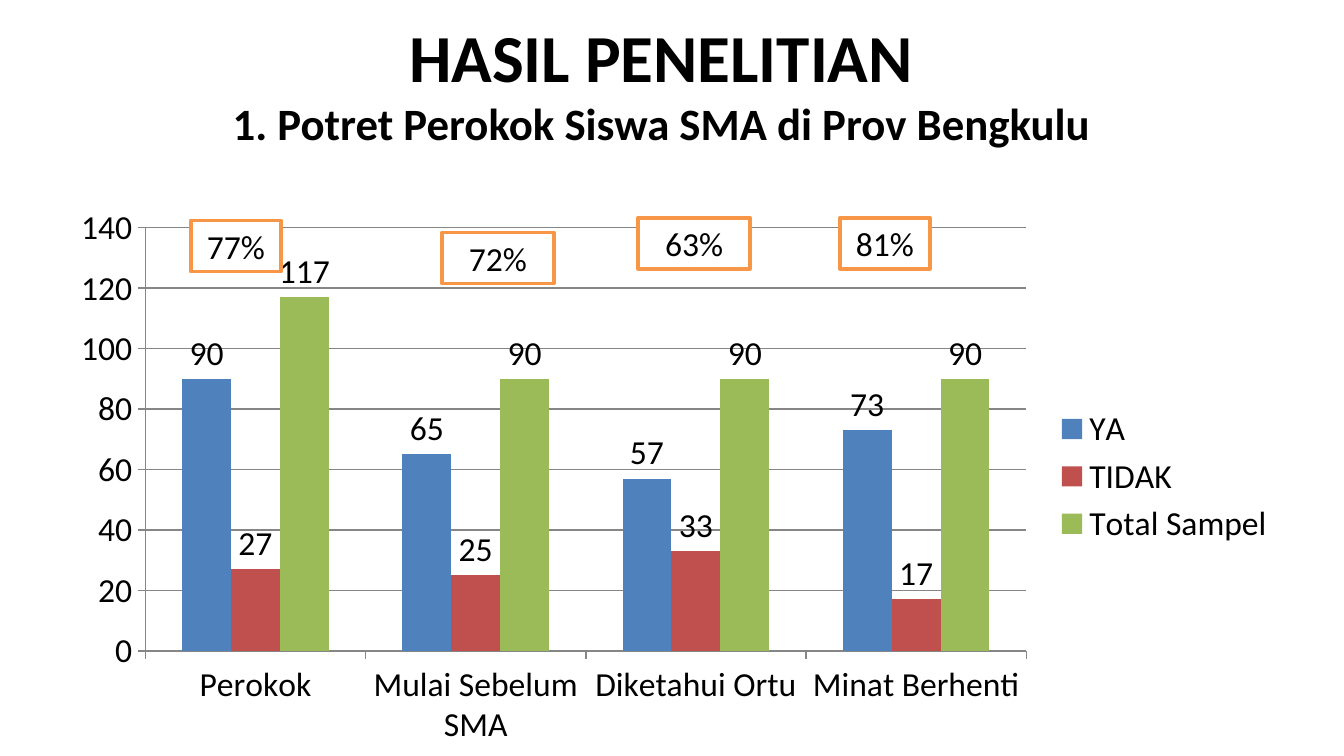
import pptx
import pptx.util
import pptx.chart.data
import pptx.dml.color
import pptx.enum.chart
import pptx.enum.shapes
import pptx.enum.text

Inches = pptx.util.Inches
FONT = "Calibri"
COLORS = {
    "text": "000000",
    "paper": "FFFFFF",
    "accent": "F79646",
    "axis": "868686",
    "YA": "4F81BD",
    "TIDAK": "C0504D",
    "Total Sampel": "9BBB59",
}


def color(name):
    return pptx.dml.color.RGBColor.from_string(COLORS[name])


class SlideBuilder:
    """Holds the style and the current slide."""

    def __init__(self, page):
        self.page = page

    def style_font(self, font, size, bold=False):
        font.name = FONT
        font.size = pptx.util.Pt(size)
        font.bold = bold
        font.color.rgb = color("text")

    def style_line(self, line, name, width):
        line.color.rgb = color(name)
        line.width = pptx.util.Pt(width)

    def title(self, lines, sizes, left, top, width, height):
        box = self.page.shapes.title
        box.left, box.top = Inches(left), Inches(top)
        box.width, box.height = Inches(width), Inches(height)
        frame = box.text_frame
        frame.text = "\v".join(lines)
        frame.word_wrap = True
        frame.auto_size = pptx.enum.text.MSO_AUTO_SIZE.NONE
        frame.vertical_anchor = pptx.enum.text.MSO_ANCHOR.MIDDLE
        para = frame.paragraphs[0]
        para.alignment = pptx.enum.text.PP_ALIGN.CENTER
        for span, size in zip(para.runs, sizes):
            self.style_font(span.font, size, bold=True)

    def column_chart(self, categories, series, left, top, width, height):
        data = pptx.chart.data.CategoryChartData()
        data.categories = categories
        for name, values in series.items():
            data.add_series(name, values)
        chart = self.page.shapes.add_chart(
            pptx.enum.chart.XL_CHART_TYPE.COLUMN_CLUSTERED,
            Inches(left), Inches(top), Inches(width), Inches(height), data,
        ).chart
        self.style_font(chart.font, 18)
        chart.has_title = False

        # Legend
        chart.has_legend = True
        chart.legend.position = pptx.enum.chart.XL_LEGEND_POSITION.RIGHT
        chart.legend.include_in_layout = False

        # Axes
        for axis in (chart.category_axis, chart.value_axis):
            axis.major_tick_mark = pptx.enum.chart.XL_TICK_MARK.OUTSIDE
            axis.minor_tick_mark = pptx.enum.chart.XL_TICK_MARK.NONE
            self.style_line(axis.format.line, "axis", 0.75)
        chart.value_axis.has_major_gridlines = True
        self.style_line(chart.value_axis.major_gridlines.format.line, "axis", 0.75)

        # Columns and their labels
        plot = chart.plots[0]
        plot.gap_width = 150
        plot.overlap = 0
        plot.vary_by_categories = False
        for column in plot.series:
            column.format.fill.solid()
            column.format.fill.fore_color.rgb = color(column.name)
            labels = column.data_labels
            labels.show_value = True
            labels.position = pptx.enum.chart.XL_LABEL_POSITION.OUTSIDE_END

    def percent_box(self, text, left, top, width, height):
        box = self.page.shapes.add_shape(
            pptx.enum.shapes.MSO_SHAPE.RECTANGLE,
            Inches(left), Inches(top), Inches(width), Inches(height),
        )
        box.shadow.inherit = False
        box.fill.solid()
        box.fill.fore_color.rgb = color("paper")
        self.style_line(box.line, "accent", 2)
        frame = box.text_frame
        frame.text = text
        frame.word_wrap = True
        frame.vertical_anchor = pptx.enum.text.MSO_ANCHOR.MIDDLE
        para = frame.paragraphs[0]
        para.alignment = pptx.enum.text.PP_ALIGN.CENTER
        self.style_font(para.runs[0].font, 18)


def main():
    # Widescreen page, 16:9
    deck = pptx.Presentation()
    deck.slide_width, deck.slide_height = Inches(10), Inches(10 * 9 / 16)
    builder = SlideBuilder(deck.slides.add_slide(deck.slide_layouts[5]))

    # Heading
    builder.title(
        ["HASIL PENELITIAN", "1. Potret Perokok Siswa SMA di Prov Bengkulu"],
        [36, 24], 0.42, 0.25, 9, 0.73,
    )

    # Survey results
    builder.column_chart(
        ["Perokok", "Mulai Sebelum SMA", "Diketahui Ortu", "Minat Berhenti"],
        {
            "YA": [90, 65, 57, 73],
            "TIDAK": [27, 25, 33, 17],
            "Total Sampel": [117, 90, 90, 90],
        },
        0.42, 1.46, 9.17, 4.17,
    )

    # Share of "YA" above each group
    for text, left, top, width in [
        ("77%", 1.42, 1.64, 0.67),
        ("72%", 3.29, 1.73, 0.83),
        ("63%", 4.75, 1.62, 0.83),
        ("81%", 6.25, 1.62, 0.67),
    ]:
        builder.percent_box(text, left, top, width, 0.38)

    deck.save("out.pptx")


if __name__ == "__main__":
    main()
